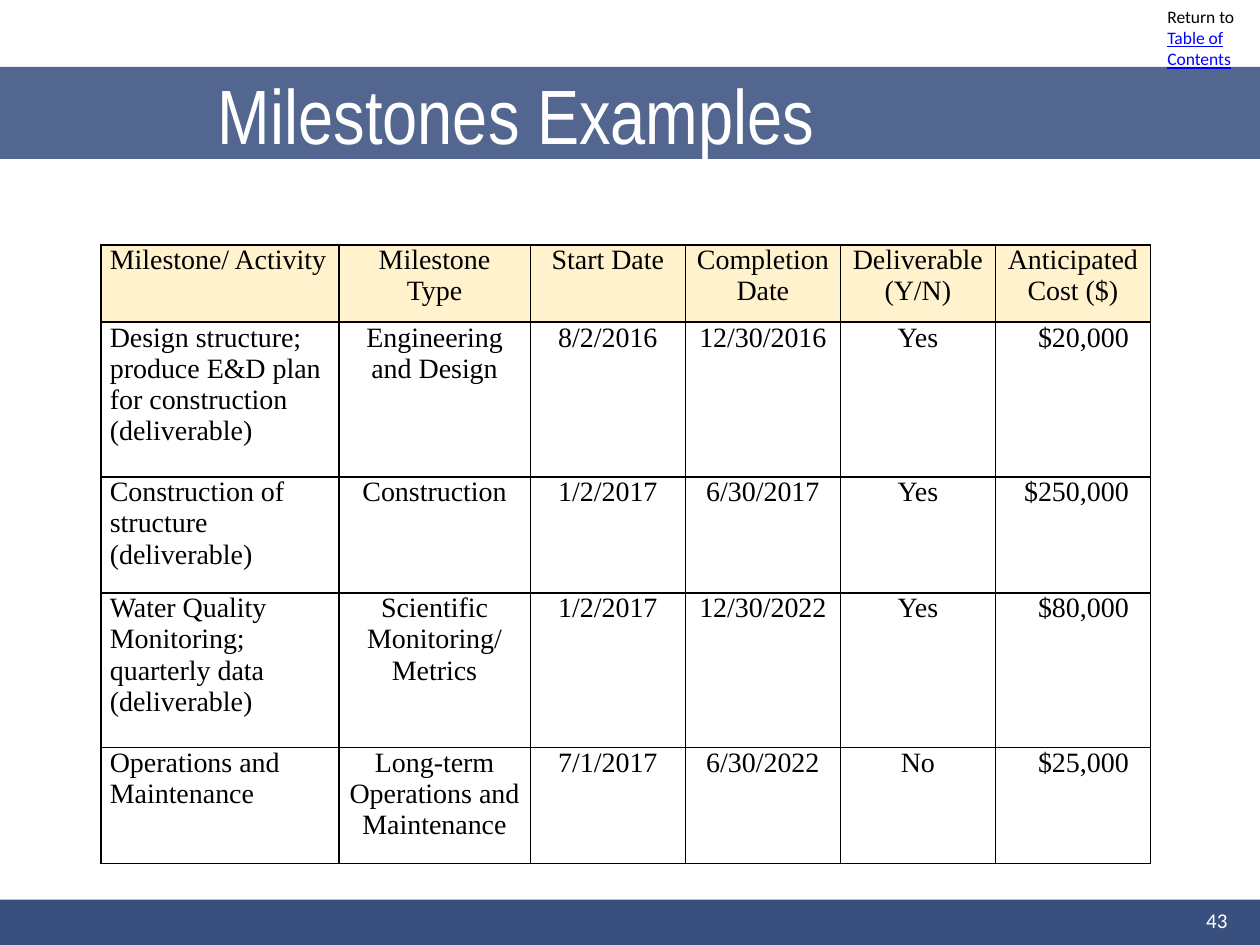
from dataclasses import dataclass

from lxml import etree
from pptx import Presentation
from pptx.dml.color import RGBColor
from pptx.enum.shapes import MSO_SHAPE
from pptx.enum.text import MSO_ANCHOR, PP_ALIGN
from pptx.oxml.ns import qn
from pptx.util import Pt

RECTANGLE = MSO_SHAPE.RECTANGLE
TOP, MIDDLE = MSO_ANCHOR.TOP, MSO_ANCHOR.MIDDLE
LEFT, CENTER, RIGHT = PP_ALIGN.LEFT, PP_ALIGN.CENTER, PP_ALIGN.RIGHT

NAVY, WHITE, BLACK = "39507F", "FFFFFF", "000000"
CREAM, LINK_BLUE = "FFF2CC", "0000FF"

COLUMN_WIDTHS = [136] + [109.5] + [88.6] * 4
COLUMN_ALIGNMENTS = [LEFT] + [CENTER] * 4 + [RIGHT]
ROW_HEIGHTS = [44.2, 88.4, 66.3, 88.4, 66.3]
CELL_INSET, COST_INSET = 5.2, 12.4

MILESTONES = [
    ["Milestone/ Activity", "Milestone Type", "Start Date", "Completion Date",
     "Deliverable (Y/N)", "Anticipated Cost ($)"],
    ["Design structure; produce E&D plan for construction (deliverable)",
     "Engineering and Design", "8/2/2016", "12/30/2016", "Yes", "$20,000"],
    ["Construction of structure (deliverable)", "Construction",
     "1/2/2017", "6/30/2017", "Yes", "$250,000"],
    ["Water Quality Monitoring; quarterly data (deliverable)",
     "Scientific Monitoring/ Metrics", "1/2/2017", "12/30/2022", "Yes", "$80,000"],
    ["Operations and Maintenance", "Long-term Operations and Maintenance",
     "7/1/2017", "6/30/2022", "No", "$25,000"],
]


@dataclass
class Box:
    """Position and size in points."""
    left: float
    top: float
    width: float
    height: float

    def lengths(self) -> tuple:
        """Return the four values as lengths."""
        return Pt(self.left), Pt(self.top), Pt(self.width), Pt(self.height)


@dataclass
class TextRun:
    """A stretch of text with one look."""
    text: str
    font_name: str
    size: float
    color: str
    underline: bool = False


def set_color(color_owner, color: str) -> None:
    """Give a fill a solid colour from a hex string."""
    color_owner.solid()
    color_owner.fore_color.rgb = RGBColor.from_string(color)


def add_runs(paragraph, runs: list[TextRun], alignment) -> None:
    """Add styled runs to a paragraph."""
    paragraph.alignment = alignment
    for text_run in runs:
        run = paragraph.add_run()
        run.text = text_run.text
        run.font.name = text_run.font_name
        run.font.size = Pt(text_run.size)
        set_color(run.font.fill, text_run.color)
        if text_run.underline:
            run.font.underline = True


def add_band(slide, box: Box, opacity: int = 100) -> None:
    """Draw a navy band across the slide."""
    shape = slide.shapes.add_shape(RECTANGLE, *box.lengths())
    shape.shadow.inherit = False
    shape.line.fill.background()
    set_color(shape.fill, NAVY)
    if opacity < 100:
        color = shape.fill._xPr.find(qn("a:solidFill"))[0]
        etree.SubElement(color, qn("a:alpha"), val=str(opacity * 1000))


def add_text(slide, box: Box, runs: list[TextRun], alignment=LEFT, anchor=TOP) -> None:
    """Add a wrapping text box with one paragraph."""
    text_frame = slide.shapes.add_textbox(*box.lengths()).text_frame
    text_frame.word_wrap = True
    text_frame.vertical_anchor = anchor
    add_runs(text_frame.paragraphs[0], runs, alignment)


def add_borders(cell) -> None:
    """Put a thin black line on each side of a cell."""
    properties = cell._tc.get_or_add_tcPr()
    for position, side in enumerate(("a:lnL", "a:lnR", "a:lnT", "a:lnB")):
        line = etree.Element(qn(side), w=str(Pt(1)))
        fill = etree.SubElement(line, qn("a:solidFill"))
        etree.SubElement(fill, qn("a:srgbClr"), val=BLACK)
        properties.insert(position, line)


def add_milestone_table(slide, left: float, top: float) -> None:
    """Add the milestone table with its header row."""
    box = Box(left, top, sum(COLUMN_WIDTHS), sum(ROW_HEIGHTS))
    table = slide.shapes.add_table(
        len(ROW_HEIGHTS), len(COLUMN_WIDTHS), *box.lengths()).table
    table.horz_banding = False
    for column, width in zip(table.columns, COLUMN_WIDTHS):
        column.width = Pt(width)
    for row_index, (row, height) in enumerate(zip(table.rows, ROW_HEIGHTS)):
        row.height = Pt(height)
        is_header = row_index == 0
        for cell, text, alignment in zip(row.cells, MILESTONES[row_index], COLUMN_ALIGNMENTS):
            if is_header and alignment == RIGHT:
                alignment = CENTER
            cell.margin_left = Pt(CELL_INSET)
            cell.margin_right = Pt(COST_INSET if alignment == RIGHT else CELL_INSET)
            cell.margin_top = cell.margin_bottom = Pt(0)
            set_color(cell.fill, CREAM if is_header else WHITE)
            add_borders(cell)
            add_runs(cell.text_frame.paragraphs[0],
                     [TextRun(text, "Times New Roman", 16, BLACK)], alignment)


def main() -> None:
    """Build and save the slide."""
    presentation = Presentation()
    presentation.slide_width, presentation.slide_height = Pt(720), Pt(540)
    slide = presentation.slides.add_slide(presentation.slide_layouts[6])
    add_band(slide, Box(0, 514, 720, 26))
    add_band(slide, Box(0, 38.2, 720, 52.6), opacity=87)
    add_text(slide, Box(660, 0, 60, 44), [
        TextRun("Return to ", "Calibri", 10, BLACK),
        TextRun("Table of Contents", "Calibri", 10, LINK_BLUE, underline=True)])
    add_text(slide, Box(117.4, 20.2, 375, 90),
             [TextRun("Milestones Examples", "Arial Narrow", 44, WHITE)], anchor=MIDDLE)
    add_milestone_table(slide, 57.6, 139.9)
    add_text(slide, Box(540.7, 511.2, 167.8, 28.8),
             [TextRun("43", "Calibri", 12, WHITE)], RIGHT, MIDDLE)
    presentation.save("out.pptx")


if __name__ == "__main__":
    main()
